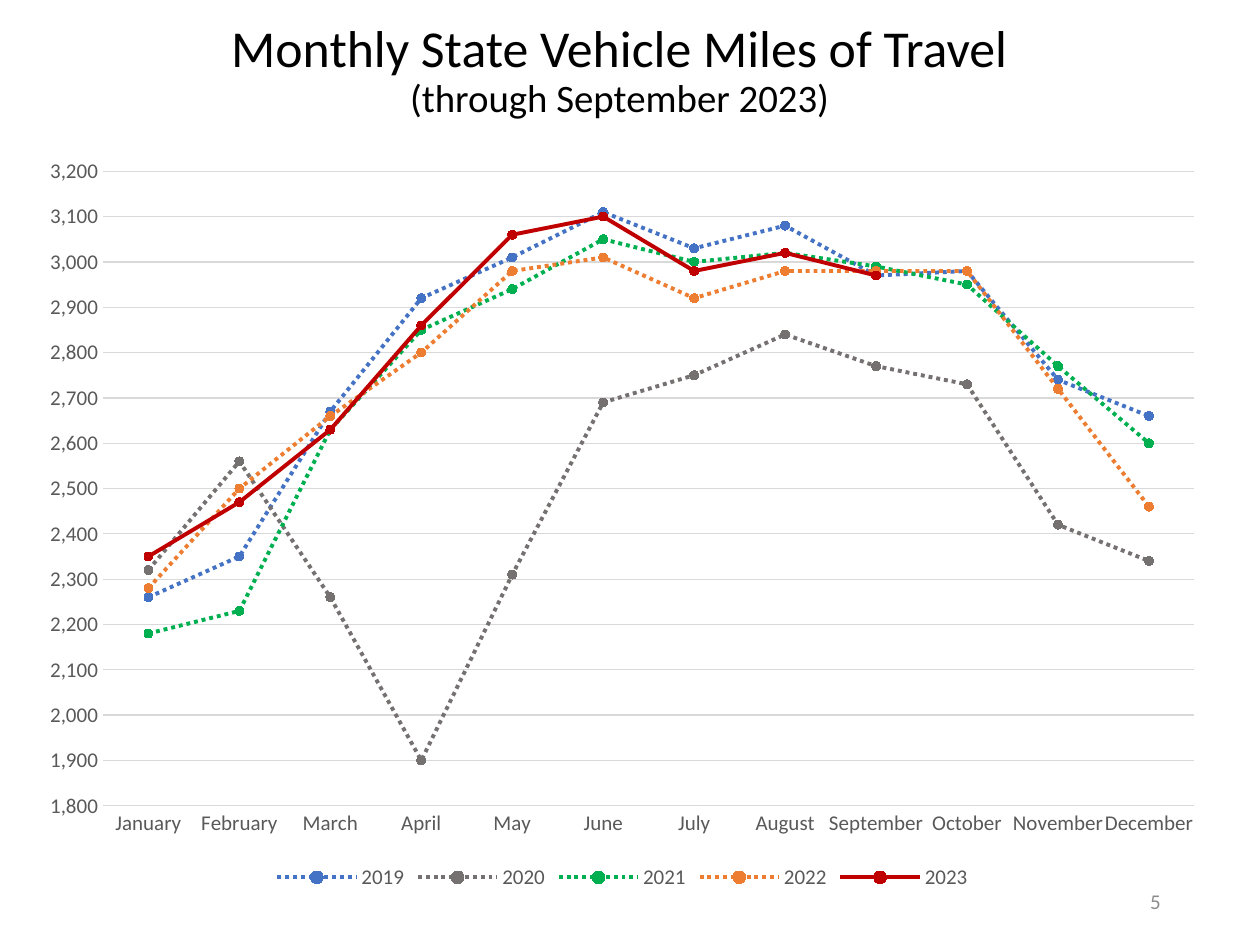
from pptx import Presentation
from pptx.chart.data import CategoryChartData as ChartData
from pptx.dml.color import RGBColor
from pptx.enum.chart import XL_CHART_TYPE as ChartType
from pptx.enum.chart import XL_LEGEND_POSITION as LegendPosition
from pptx.enum.chart import XL_MARKER_STYLE as MarkerStyle
from pptx.enum.chart import XL_TICK_MARK as TickMark
from pptx.enum.dml import MSO_LINE as Dash
from pptx.enum.text import MSO_ANCHOR as Anchor
from pptx.enum.text import PP_ALIGN as Align
from pptx.util import Cm, Pt

MONTHS = ["January", "February", "March", "April", "May", "June", "July",
          "August", "September", "October", "November", "December"]
TRAVEL = {
    "2019": ("4472C4", Dash.ROUND_DOT, [2260, 2350, 2670, 2920, 3010, 3110,
                                        3030, 3080, 2970, 2980, 2740, 2660]),
    "2020": ("767171", Dash.ROUND_DOT, [2320, 2560, 2260, 1900, 2310, 2690,
                                        2750, 2840, 2770, 2730, 2420, 2340]),
    "2021": ("00B050", Dash.ROUND_DOT, [2180, 2230, 2630, 2850, 2940, 3050,
                                        3000, 3020, 2990, 2950, 2770, 2600]),
    "2022": ("ED7D31", Dash.ROUND_DOT, [2280, 2500, 2660, 2800, 2980, 3010,
                                        2920, 2980, 2980, 2980, 2720, 2460]),
    "2023": ("C00000", Dash.SOLID, [2350, 2470, 2630, 2860, 3060, 3100,
                                    2980, 3020, 2970, None, None, None]),
}


def rgb(color):
    return RGBColor.from_string(color)


def format_font(font, size, color, name="Calibri"):
    font.name = name
    font.size = Pt(size)
    font.bold = False
    font.color.rgb = rgb(color)


def format_line(line, color, width):
    line.color.rgb = rgb(color)
    line.width = Pt(width)


def write(para, text, size=12, color="000000", align=Align.LEFT, spacing=1.0):
    para.alignment = align
    para.line_spacing = spacing
    span = para.add_run()
    span.text = text
    format_font(span.font, size, color)


class Page:
    label_color = "595959"
    grid_color = "D9D9D9"
    label_size = 12

    def __init__(self, deck):
        self.slide = deck.slides.add_slide(deck.slide_layouts[6])

    def text(self, left, top, width, height, lines, anchor, **style):
        box = self.slide.shapes.add_textbox(Cm(left), Cm(top), Cm(width), Cm(height))
        frame = box.text_frame
        frame.word_wrap = True
        frame.vertical_anchor = anchor
        for index, (text, size) in enumerate(lines):
            para = frame.add_paragraph() if index else frame.paragraphs[0]
            write(para, text, size=size, **style)

    def style_axis(self, axis):
        axis.major_tick_mark = axis.minor_tick_mark = TickMark.NONE
        format_font(axis.tick_labels.font, self.label_size, self.label_color)

    def line_chart(self, left, top, width, height, categories, lines):
        data = ChartData(number_format="#,##0")
        data.categories = categories
        for name, (_, _, values) in lines.items():
            data.add_series(name, values)
        chart = self.slide.shapes.add_chart(
            ChartType.LINE_MARKERS, Cm(left), Cm(top), Cm(width), Cm(height), data).chart
        format_font(chart.font, 10, "000000")
        chart.has_title = False
        chart.has_legend = True
        chart.legend.position = LegendPosition.BOTTOM
        chart.legend.include_in_layout = False
        format_font(chart.legend.font, self.label_size, self.label_color)

        months, miles = chart.category_axis, chart.value_axis
        self.style_axis(months)
        self.style_axis(miles)
        format_line(months.format.line, self.grid_color, 0.75)
        miles.format.line.fill.background()
        miles.minimum_scale, miles.maximum_scale, miles.major_unit = 1800, 3200, 100
        miles.tick_labels.number_format = "#,##0"
        miles.tick_labels.number_format_is_linked = False
        format_line(miles.major_gridlines.format.line, self.grid_color, 0.75)

        plot = chart.plots[0]
        plot.vary_by_categories = False
        for series, (color, dash, _) in zip(plot.series, lines.values()):
            series.smooth = False
            format_line(series.format.line, color, 2.25)
            series.format.line.dash_style = dash
            marker = series.marker
            marker.style, marker.size = MarkerStyle.CIRCLE, 5
            marker.format.fill.solid()
            marker.format.fill.fore_color.rgb = rgb(color)
            format_line(marker.format.line, color, 0.75)


def main():
    deck = Presentation()
    deck.slide_width, deck.slide_height = Cm(25.4), Cm(19.05)
    page = Page(deck)
    page.line_chart(0.53, 2.9, 24.03, 15.14, MONTHS, TRAVEL)
    page.text(17.93, 17.65, 5.72, 1.02, [("5", 12)], Anchor.MIDDLE,
              color="8C8C8C", align=Align.RIGHT)
    page.text(1.55, 0.2, 21.89, 2.36,
              [("Monthly State Vehicle Miles of Travel", 29.6),
               ("(through September 2023)", 22.2)],
              Anchor.BOTTOM, align=Align.CENTER, spacing=0.9)
    deck.save("out.pptx")


if __name__ == "__main__":
    main()
